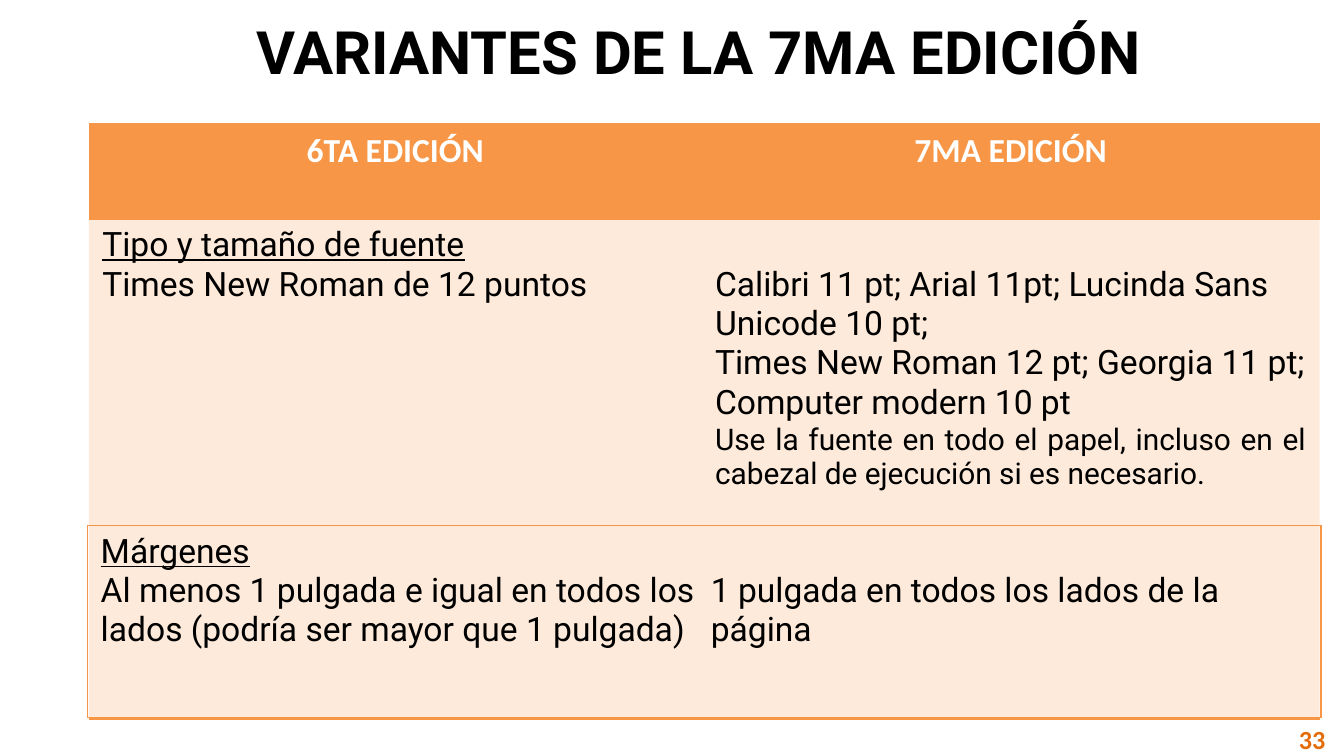
from dataclasses import dataclass
from pptx import Presentation
from pptx.dml.color import RGBColor
from pptx.enum import text as t
from pptx.oxml import parse_xml
from pptx.oxml.ns import nsdecls
from pptx.util import Cm, Pt


@dataclass(frozen=True)
class Theme:
    head: str = "Calibri"
    body: str = "Roboto"
    ink: str = "000000"
    pale: str = "FFFFFF"
    main: str = "F79646"
    deep: str = "E46C0A"
    title: int = 32
    text: int = 18
    note: int = 16
    page: int = 14
    # Built-in table styles: themed accent 6, and no style at all
    grid: str = "{68D230F3-CF80-4859-8CE7-A43EE81993B5}"
    bare: str = "{2D5ABB26-0587-4C30-8999-92F81FD0307C}"


TH = Theme()
LEFT, MID, RIGHT, JUST = (t.PP_ALIGN.LEFT, t.PP_ALIGN.CENTER,
                          t.PP_ALIGN.RIGHT, t.PP_ALIGN.JUSTIFY)

# Content: each line is (text, options)
TITLE = "VARIANTES DE LA 7MA EDICIÓN "
HEADS = ["6TA EDICIÓN", "7MA EDICIÓN"]
FONTS = [
    [("Tipo y tamaño de fuente", {"under": True}),
     ("Times New Roman de 12 puntos", {})],
    [("Calibri 11 pt; Arial 11pt; Lucinda Sans Unicode 10 pt;", {}),
     ("Times New Roman 12 pt; Georgia 11 pt; Computer modern 10 pt", {}),
     ("Use la fuente en todo el papel, incluso en el cabezal de ejecución "
      "si es necesario.", {"size": TH.note, "align": JUST})],
]
EDGES = [
    ("Márgenes", {"under": True}),
    ("Al menos 1 pulgada e igual en todos los\t"
     "1 pulgada en todos los lados de la", {}),
    ("lados (podría ser mayor que 1 pulgada)\tpágina", {}),
]
PAGE = "33"

# Layout in centimetres
WIDE, HIGH = 25.4, 14.29
COLS, ROWS = (11.58, 11.68), (1.8, 9.45)
GRID = (1.68, 2.34, sum(COLS), sum(ROWS))
BAND = (1.65, 9.93, 23.32, 3.63)
DROP = 0.87   # top margin that leaves the first line free
STOP = 11.53  # tab to the second column


def place(box):
    return [Cm(n) for n in box]


def write(frame, lines, font=TH.body, size=TH.text, color=TH.ink,
          bold=False, align=LEFT):
    for i, (words, opts) in enumerate(lines):
        par = frame.paragraphs[0] if i == 0 else frame.add_paragraph()
        par.alignment = opts.get("align", align)
        if "\t" in words:
            par._p.get_or_add_pPr().append(parse_xml(
                f'<a:tabLst {nsdecls("a")}>'
                f'<a:tab pos="{Cm(STOP)}" algn="l"/></a:tabLst>'))
        run = par.add_run()
        run.text = words
        run.font.name = font
        run.font.size = Pt(opts.get("size", size))
        run.font.bold = bold
        run.font.underline = opts.get("under", False)
        run.font.color.rgb = RGBColor.from_string(color)


def add_grid(slide, box, cols, rows, style):
    table = slide.shapes.add_table(len(rows), len(cols), *place(box)).table
    table._tbl.tblPr.find("{*}tableStyleId").text = style
    for col, size in zip(table.columns, cols):
        col.width = Cm(size)
    for row, size in zip(table.rows, rows):
        row.height = Cm(size)
    return table


def frame_cell(cell, color, width):
    """Draw a line on all four sides of a cell."""
    prop = cell._tc.get_or_add_tcPr()
    for i, side in enumerate(("lnL", "lnR", "lnT", "lnB")):
        prop.insert(i, parse_xml(
            f'<a:{side} {nsdecls("a")} w="{Pt(width)}"><a:solidFill>'
            f'<a:srgbClr val="{color}"/></a:solidFill></a:{side}>'))


def main():
    deck = Presentation()
    deck.slide_width, deck.slide_height = Cm(WIDE), Cm(HIGH)
    slide = deck.slides.add_slide(deck.slide_layouts[5])

    title = slide.shapes.title
    title.left, title.top, title.width, title.height = place(
        (1.3, 0, 24.1, 1.93))
    title.text_frame.auto_size = t.MSO_AUTO_SIZE.NONE
    title.text_frame.vertical_anchor = t.MSO_ANCHOR.MIDDLE
    write(title.text_frame, [(TITLE, {})], size=TH.title, bold=True, align=MID)

    grid = add_grid(slide, GRID, COLS, ROWS, TH.grid)
    for i, (head, lines) in enumerate(zip(HEADS, FONTS)):
        top = grid.cell(0, i)
        top.fill.solid()
        top.fill.fore_color.rgb = RGBColor.from_string(TH.main)
        write(top.text_frame, [(head, {})], TH.head, color=TH.pale,
              bold=True, align=MID)
        write(grid.cell(1, i).text_frame, lines)
    grid.cell(1, 1).margin_top = Cm(DROP)

    note = slide.shapes.add_textbox(*place((19.38, 13.59, 5.92, 0.76)))
    note.text_frame.word_wrap = True
    note.text_frame.vertical_anchor = t.MSO_ANCHOR.MIDDLE
    write(note.text_frame, [(PAGE, {})], TH.head, TH.page, TH.deep,
          True, RIGHT)

    band = add_grid(slide, BAND, BAND[2:3], BAND[3:], TH.bare)
    band.first_row = band.horz_banding = False
    cell = band.cell(0, 0)
    cell.fill.background()
    frame_cell(cell, TH.main, 1)
    write(cell.text_frame, EDGES)

    deck.save("out.pptx")


if __name__ == "__main__":
    main()
